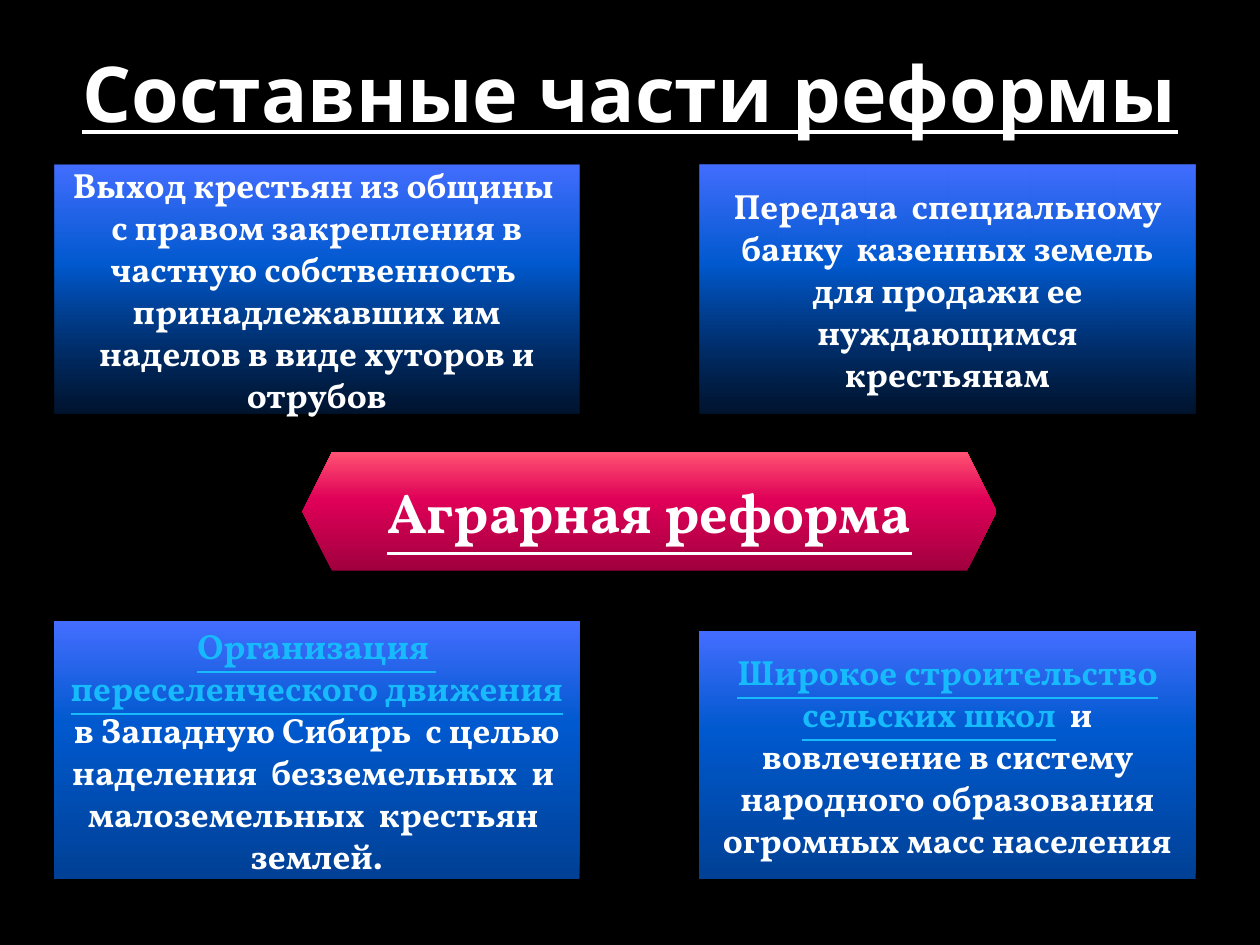
from lxml import etree
from pptx import Presentation
from pptx.dml.color import RGBColor
from pptx.enum import shapes, text
from pptx.oxml import ns
from pptx.util import Inches, Pt

COLORS = {"background": "000000", "text": "FFFFFF", "accent": "17BBFD"}
BLUE = [(0, "004095", 100), (60, "0059CE", 100), (100, "436DFF", 100)]
FADING_BLUE = [(0, "004095", 30)] + BLUE[1:]
RED = [(0, "A1003F", 100), (60, "DF0057", 100), (100, "FF5272", 100)]

TITLE = "Составные части реформы"
CENTER = "Аграрная реформа"
LEFT, RIGHT = (0.43, 4.17), (5.55, 3.94)
PARTS = [
    (LEFT, 1.31, 1.97, FADING_BLUE, "",
     "Выход крестьян из общины  с правом закрепления в частную собственность  "
     "принадлежавших им наделов в виде хуторов и отрубов"),
    (LEFT, 4.93, 2.05, BLUE, "Организация  переселенческого движения ",
     "в Западную Сибирь  с целью наделения  безземельных  и  малоземельных  "
     "крестьян  землей."),
    (RIGHT, 1.31, 1.97, FADING_BLUE, "",
     "Передача  специальному банку  казенных земель для продажи ее "
     "нуждающимся крестьянам"),
    (RIGHT, 5.01, 1.97, BLUE, "Широкое строительство сельских школ",
     "  и вовлечение в систему народного образования огромных масс населения"),
]


def add_text(shape, content, size=20, font="Vollkorn", color="text", underline=False):
    frame = shape.text_frame
    frame.word_wrap = True
    frame.vertical_anchor = text.MSO_ANCHOR.MIDDLE
    paragraph = frame.paragraphs[0]
    paragraph.alignment = text.PP_ALIGN.CENTER
    run = paragraph.add_run()
    run.text = content
    run.font.name, run.font.size = font, Pt(size)
    run.font.bold, run.font.underline = True, underline
    run.font.color.rgb = RGBColor.from_string(COLORS[color])


def fill_gradient(shape, stops):
    gradient = etree.Element(ns.qn("a:gradFill"), rotWithShape="1")
    stop_list = etree.SubElement(gradient, ns.qn("a:gsLst"))
    for position, color, opacity in stops:
        stop = etree.SubElement(stop_list, ns.qn("a:gs"), pos=str(position * 1000))
        value = etree.SubElement(stop, ns.qn("a:srgbClr"), val=color)
        if opacity < 100:
            etree.SubElement(value, ns.qn("a:alpha"), val=str(opacity * 1000))
    etree.SubElement(gradient, ns.qn("a:lin"), ang=str(270 * 60000), scaled="0")
    shape.element.spPr.find(ns.qn("a:prstGeom")).addnext(gradient)


def add_panel(slide, kind, box, stops):
    shape = slide.shapes.add_shape(kind, *map(Inches, box))
    shape.shadow.inherit = False
    shape.line.fill.background()
    fill_gradient(shape, stops)
    return shape


def main():
    presentation = Presentation()
    presentation.slide_width, presentation.slide_height = Inches(10), Inches(7.5)
    slide = presentation.slides.add_slide(presentation.slide_layouts[6])
    slide.background.fill.solid()
    slide.background.fill.fore_color.rgb = RGBColor.from_string(COLORS["background"])

    title = slide.shapes.add_textbox(*map(Inches, (0.5, 0.3, 9, 0.85)))
    add_text(title, TITLE, size=44, font="Noto Sans", underline=True)

    center = add_panel(slide, shapes.MSO_SHAPE.HEXAGON, (2.4, 3.59, 5.51, 0.94), RED)
    add_text(center, CENTER, size=32, underline=True)

    for (left, width), top, height, stops, lead, body in PARTS:
        panel = add_panel(slide, shapes.MSO_SHAPE.RECTANGLE,
                          (left, top, width, height), stops)
        if lead:
            add_text(panel, lead, color="accent", underline=True)
        add_text(panel, body)

    presentation.save("out.pptx")


if __name__ == "__main__":
    main()
